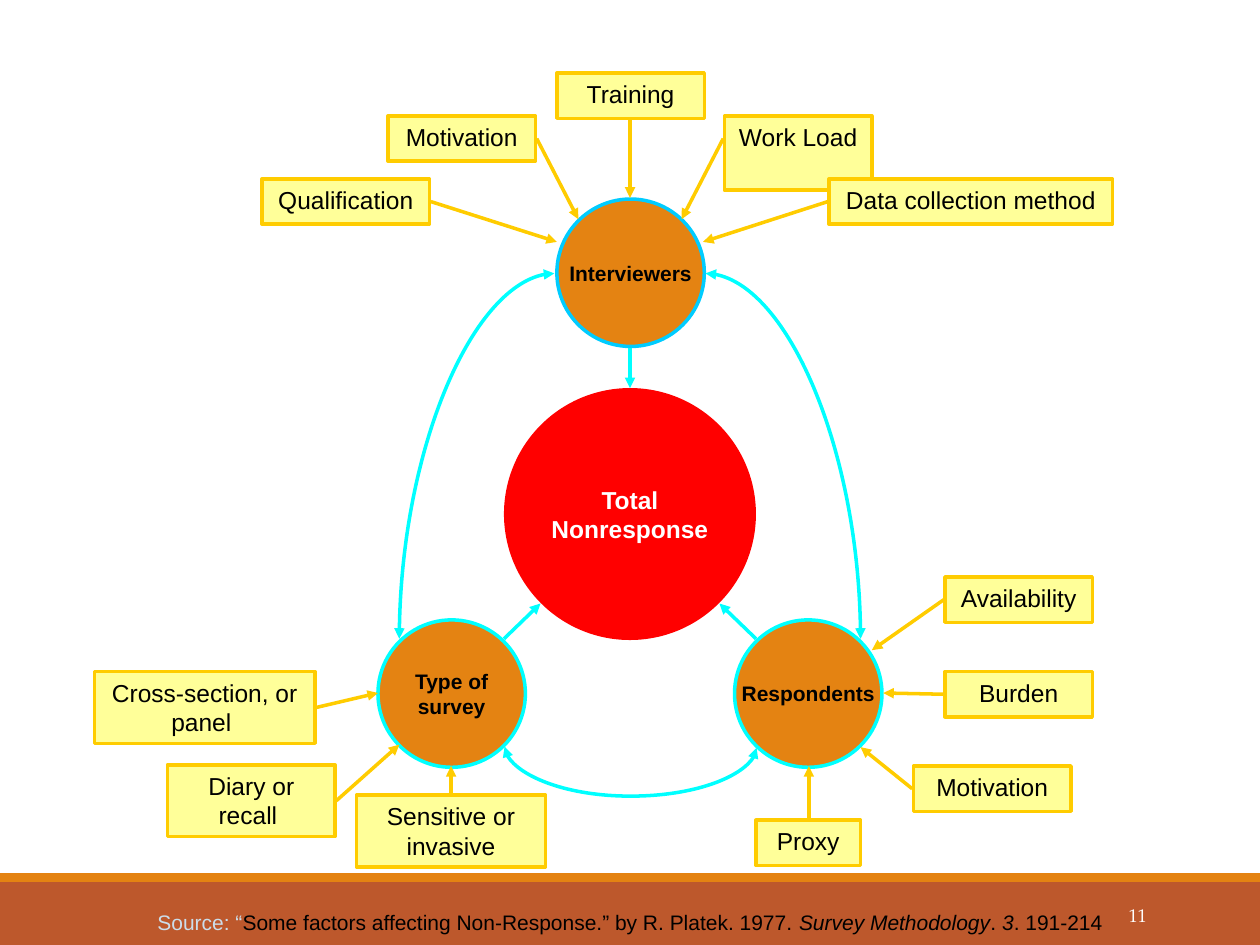
from lxml import etree
from pptx import Presentation
from pptx.dml.color import RGBColor
from pptx.enum.shapes import MSO_CONNECTOR, MSO_SHAPE
from pptx.enum.text import MSO_ANCHOR, PP_ALIGN
from pptx.oxml.ns import qn
from pptx.util import Pt

PX = 9144
RECT, OVAL = MSO_SHAPE.RECTANGLE, MSO_SHAPE.OVAL
LINE, CURVE = MSO_CONNECTOR.STRAIGHT, MSO_CONNECTOR.CURVE
TOP, MID = MSO_ANCHOR.TOP, MSO_ANCHOR.MIDDLE
MIDDLE, RIGHT = PP_ALIGN.CENTER, PP_ALIGN.RIGHT
HUB, TAG = 117, 36

COLORS = {
    "rust": "BD582C", "orange": "E48312", "red": "FF0000",
    "sky": "00CCFF", "cyan": "00FFFF", "gold": "FFCC00",
    "cream": "FFFF99", "pale": "CCDDEA", "white": "FFFFFF",
    "black": "000000",
}

HUBS = [
    ("Interviewers", 442, 158, "sky", False, (58, 118, 58, 150), [
        ("Qualification", -234, -16, 133, TAG, "right", 0, 34),
        ("Motivation", -134, -66, 117, TAG, "right", 17, 16),
        ("Training", 0, -100, 117, TAG, "bottom", 58, -1),
        ("Work Load", 133, -66, 117, 59, "left", 99, 16),
        ("Data collection method", 216, -16, 225, TAG, "left", 116, 34),
    ]),
    ("Type of survey", 300, 492, "cyan", True, (100, 15, 129, -13), [
        ("Cross-section, or panel ", -225, 41, 175, 57, "right", 0, 58),
        ("Diary or recall ", -167, 115, 133, 57, "right", 17, 99),
        ("Sensitive or invasive", -17, 139, 150, 57, "top", 58, 116),
    ]),
    ("Respondents", 583, 492, "cyan", False, (17, 15, -12, -13), [
        ("Availability", 167, -34, 117, TAG, "left", 109, 24),
        ("Burden", 167, 41, 117, TAG, "left", 118, 58),
        ("Motivation", 142, 116, 125, TAG, "left", 100, 101),
        ("Proxy", 17, 159, 83, TAG, "top", 59, 116),
    ]),
]


def px(*sizes):
    return [round(size * PX) for size in sizes]


def tint(name):
    return RGBColor.from_string(COLORS[name])


def say(shape, text, size=14, color="black", bold=False, slant=False,
        font="Arial", align=MIDDLE, anchor=MID, wrap=True):
    frame = shape.text_frame
    frame.word_wrap = wrap
    frame.vertical_anchor = anchor
    para = frame.paragraphs[0]
    para.alignment = align
    for row, part in enumerate(text.split("\n")):
        if row:
            para.add_line_break()
        run = para.add_run()
        run.text = part
        run.font.size = Pt(size)
        run.font.name = font
        run.font.bold = bold
        run.font.italic = slant
        run.font.color.rgb = tint(color)


def draw(slide, kind, box, fill, edge=None):
    shape = slide.shapes.add_shape(kind, *px(*box))
    shape.shadow.inherit = False
    shape.fill.solid()
    shape.fill.fore_color.rgb = tint(fill)
    if edge:
        shape.line.color.rgb = tint(edge)
        shape.line.width = Pt(2)
    else:
        shape.line.fill.background()
    return shape


def link(slide, ends, color, kind=LINE, both=False):
    wire = slide.shapes.add_connector(kind, *px(*ends))
    wire.line.color.rgb = tint(color)
    wire.line.width = Pt(2)
    line = wire.line._ln
    for tip in ("a:headEnd", "a:tailEnd") if both else ("a:tailEnd",):
        etree.SubElement(line, qn(tip), type="triangle")
    etree.SubElement(wire._element.spPr, qn("a:effectLst"))
    return wire


def tag(slide, left, top, item):
    text, x, y, wide, high, side, tox, toy = item
    x, y = left + x, top + y
    box = draw(slide, RECT, (x, y, wide, high), "cream", "gold")
    say(box, text, anchor=TOP)
    start = {
        "left": (x - 1, y + TAG / 2),
        "right": (x + wide + 1, y + high / 2),
        "top": (left + tox, y),
        "bottom": (left + tox, y + high + 1),
    }[side]
    link(slide, (*start, left + tox, top + toy), "gold")


def hub(slide, left, top, name, edge, wrap, spoke, tags):
    disc = draw(slide, OVAL, (left, top, HUB, HUB), "orange", edge)
    say(disc, name, size=12, bold=True, wrap=wrap)
    x, y, tox, toy = spoke
    link(slide, (left + x, top + y, left + tox, top + toy), "cyan")
    for item in tags:
        tag(slide, left, top, item)


def core(slide, left, top, size):
    disc = draw(slide, OVAL, (left, top, size, size), "red")
    disc.text_frame.margin_left = disc.text_frame.margin_right = 0
    say(disc, "Total\nNonresponse", color="white", bold=True)


def ring(slide, left, top, wide, high):
    mid = left + wide / 2
    for sign in (-1, 1):
        ends = (mid + sign * 60, top, mid + sign * wide / 2, top + high)
        wire = link(slide, ends, "cyan", CURVE, both=True)
        wire._element.spPr.prstGeom.set("prst", "curvedConnector2")
    base, reach, depth = top + high + 86, 200, 40
    ends = (mid, base - reach / 2, mid + 1, base + reach / 2)
    wire = link(slide, ends, "cyan", CURVE, both=True)
    form = wire._element.spPr.xfrm
    form.set("rot", str(270 * 60000))
    form.set("flipH", "1")
    guides = wire._element.spPr.prstGeom.get_or_add_avLst()
    etree.SubElement(guides, qn("a:gd"), name="adj1",
                     fmla=f"val {depth * 100000}")


def foot(slide, left, top, wide, high):
    draw(slide, RECT, (left, top + 7, wide, high - 7), "rust")
    draw(slide, RECT, (left, top, wide, 7), "orange")
    page = slide.shapes.add_textbox(*px(left + 812, top + 13, 108, 40))
    say(page, "11", size=10.5, color="white", font="TeX Gyre Pagella",
        align=RIGHT)
    note = slide.shapes.add_textbox(*px(left, top + 24, wide, 30))
    for text, color, slant in [
        ("Source: “", "pale", False),
        ("Some factors affecting Non-Response.” by R. Platek. 1977. ",
         "black", False),
        ("Survey Methodology", "black", True),
        (". ", "black", False),
        ("3", "black", True),
        (". 191-214", "black", False),
    ]:
        say(note, text, size=12, color=color, slant=slant, anchor=TOP)


def main():
    deck = Presentation()
    deck.slide_width, deck.slide_height = px(1000, 750)
    slide = deck.slides.add_slide(deck.slide_layouts[6])
    foot(slide, 0, 693, 1000, 57)
    core(slide, 400, 308, 200)
    for name, left, top, edge, wrap, spoke, tags in HUBS:
        hub(slide, left, top, name, edge, wrap, spoke, tags)
    ring(slide, 317, 217, 366, 290)
    deck.save("out.pptx")


if __name__ == "__main__":
    main()
